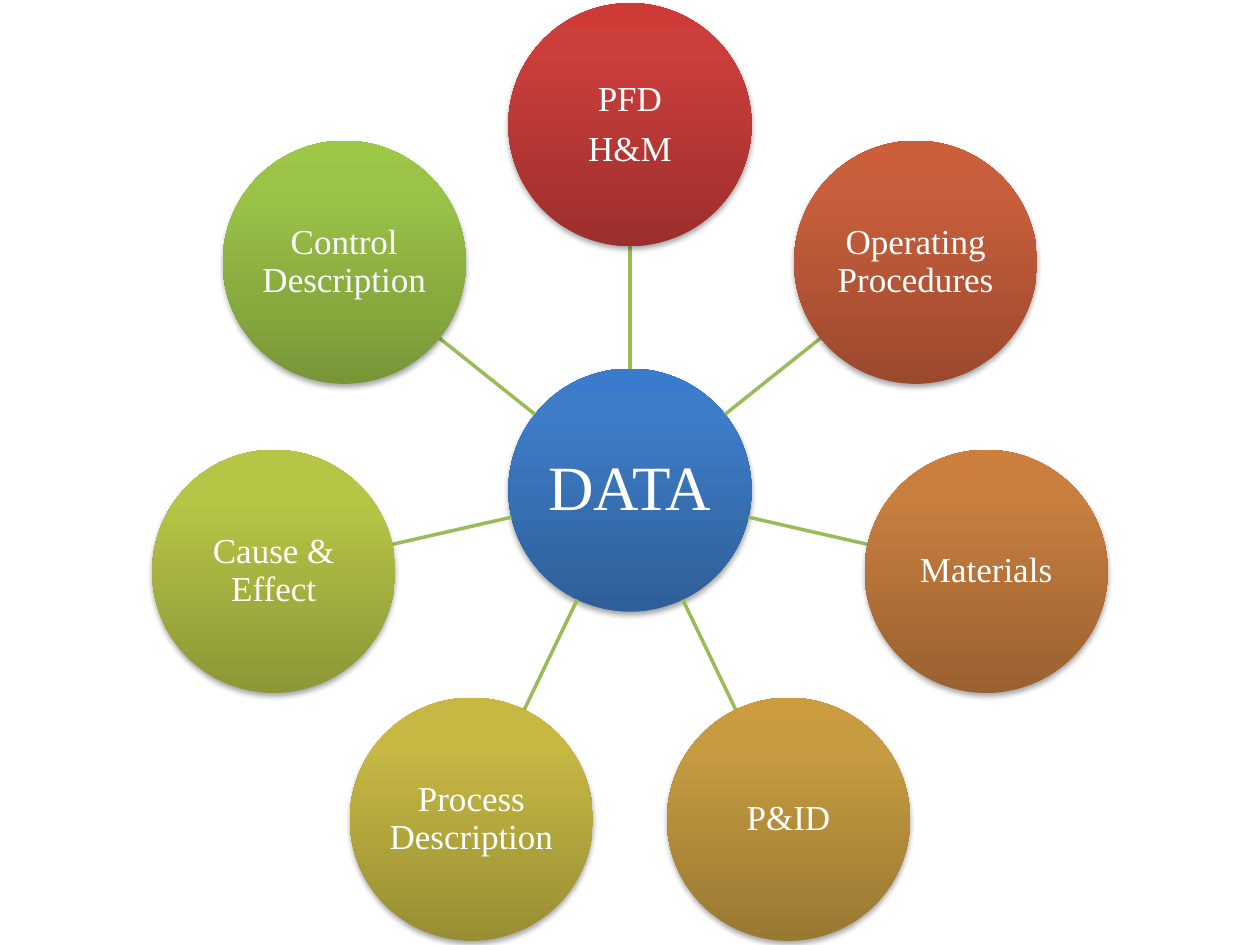
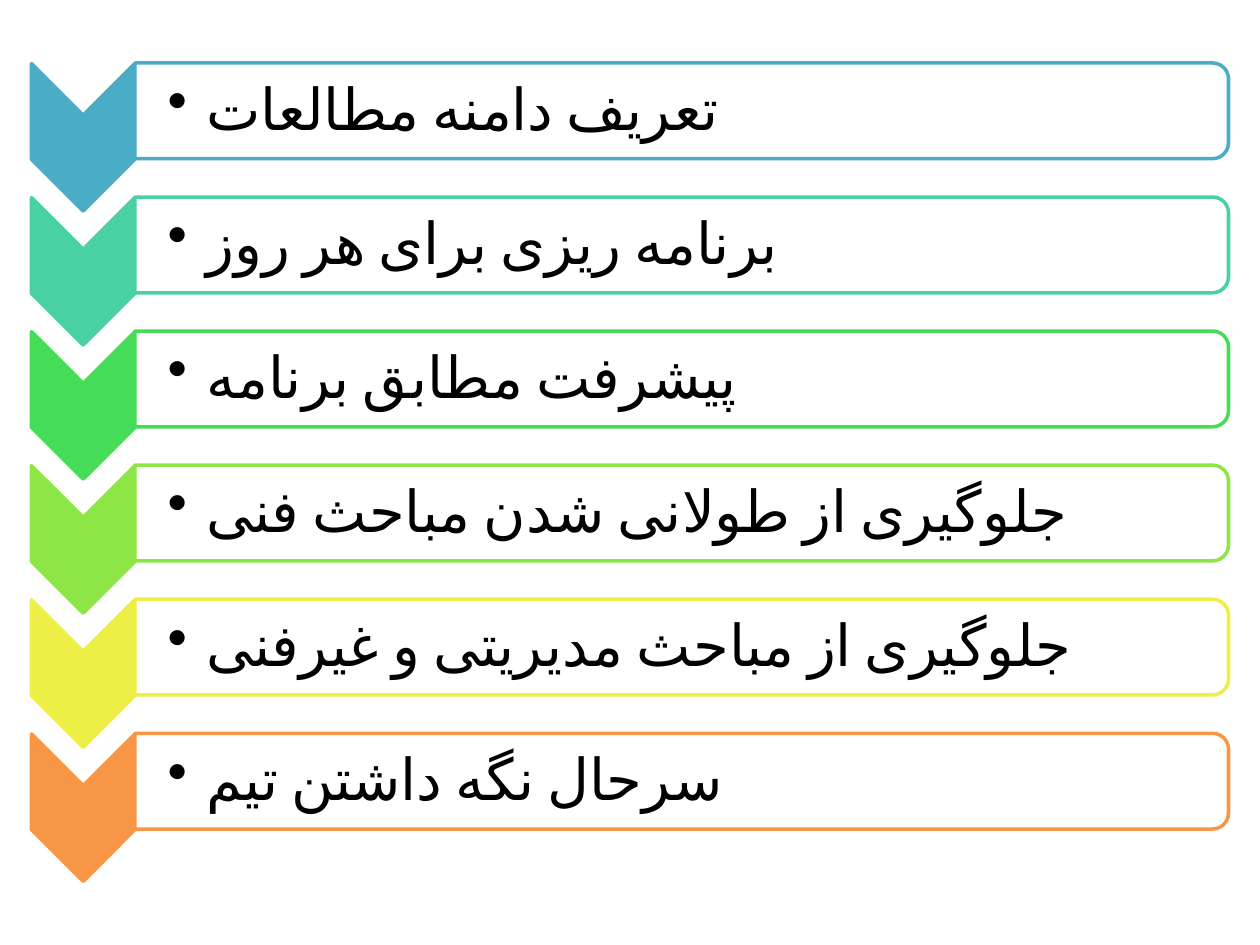
import copy
import math
from dataclasses import dataclass

from lxml import etree
from pptx import Presentation
from pptx import util as u
from pptx.dml.color import RGBColor
from pptx.enum import shapes, text
from pptx.oxml.ns import qn

PX = u.Inches(1) // 100  # 100 px to the inch
WHITE, BLACK, SPOKE_GREEN = "FFFFFF", "000000", "9BBB59"
LINE_WIDTH = u.Pt(2)

CIRCLE_SIZE = 193
HUB_X, HUB_Y = 500, 389
ORBIT_RADIUS = 290

FIRST_ROW_Y, LAST_ROW_Y = 88, 620
CHEVRON_X, CHEVRON_DROP = 66, 21
BAR_X = 541
BULLET_INDENT = 31


@dataclass(frozen=True)
class Circle:
    lines: tuple[str, ...]
    dark: str
    middle: str
    light: str
    font_size: int = 20
    inset: int = 1


@dataclass(frozen=True)
class Row:
    label: str
    color: str


HUB = Circle(("DATA",), "2F5F99", "3D7CC7", "3A7CCB", 36, 3)

SATELLITES = (
    Circle(("PFD", "H&M"), "9C2F2D", "CB3E3A", "CE3B37"),
    Circle(("Operating Procedures",), "9B492E", "C95F3C", "CD5E3A"),
    Circle(("Materials",), "9A6130", "C87E3F", "CC7E3C"),
    Circle(("P&ID",), "997832", "C79C41", "CB9D3F"),
    Circle(("Process Description",), "988E34", "C6B843", "C9BB41"),
    Circle(("Cause & Effect",), "8D9736", "B7C546", "B9C844"),
    Circle(("Control Description",), "779737", "9BC348", "9DC746"),
)

ROWS = (
    Row("تعریف دامنه مطالعات", "4BACC6"),
    Row("برنامه ریزی برای هر روز", "49D1A3"),
    Row("پیشرفت مطابق برنامه", "47DC57"),
    Row("جلوگیری از طولانی شدن مباحث فنی", "8DE646"),
    Row("جلوگیری از مباحث مدیریتی و غیرفنی", "EEEF46"),
    Row("سرحال نگه داشتن تیم", "F79646"),
)


def px(length: float) -> u.Emu:
    return u.Emu(round(length * PX))


def rgb(color: str) -> RGBColor:
    return RGBColor.from_string(color)


def add_centred(slide, kind, x: float, y: float, width: int, height: int):
    """Add a shadowless preset shape centred on x, y."""
    shape = slide.shapes.add_shape(
        kind, px(x - width / 2), px(y - height / 2), px(width), px(height))
    shape.shadow.inherit = False
    return shape


def set_frame(frame, left: int, other: int) -> None:
    """Anchor the text in the middle; left and other are its insets."""
    frame.word_wrap = True
    frame.vertical_anchor = text.MSO_ANCHOR.MIDDLE
    frame.margin_left = px(left)
    frame.margin_top = frame.margin_right = frame.margin_bottom = px(other)


def set_font(paragraph, name: str, size: int, color: str) -> None:
    paragraph.font.name = name
    paragraph.font.size = u.Pt(size)
    paragraph.font.color.rgb = rgb(color)


def set_persian(paragraph, font_name: str) -> None:
    """Mark the runs as Persian and name their complex-script font."""
    for run in paragraph.runs:
        properties = run._r.get_or_add_rPr()
        properties.set("lang", "fa-IR")
        etree.SubElement(properties, qn("a:cs"), typeface=font_name)


def fill_gradient(shape, circle: Circle) -> None:
    shape.fill.gradient()
    shape.fill.gradient_angle = 90
    stop_list = shape.element.spPr.find(".//" + qn("a:gsLst"))
    stop_list.insert(1, copy.deepcopy(stop_list[0]))
    stops = ((0, circle.dark), (0.8, circle.middle), (1, circle.light))
    for stop, (position, color) in zip(shape.fill.gradient_stops, stops):
        stop.position = position
        stop.color.rgb = rgb(color)


def add_soft_shadow(shape) -> None:
    effects = shape.element.spPr.find(qn("a:effectLst"))
    shadow = etree.SubElement(
        effects, qn("a:outerShdw"), blurRad="40000", dist="23000",
        dir="5400000", rotWithShape="0")
    color = etree.SubElement(shadow, qn("a:srgbClr"), val=BLACK)
    etree.SubElement(color, qn("a:alpha"), val="35000")


def add_circle(slide, circle: Circle, x: float, y: float) -> None:
    shape = add_centred(slide, shapes.MSO_SHAPE.OVAL, x, y, CIRCLE_SIZE, CIRCLE_SIZE)
    fill_gradient(shape, circle)
    shape.line.fill.background()
    add_soft_shadow(shape)
    frame = shape.text_frame
    set_frame(frame, circle.inset, circle.inset)
    for index, line in enumerate(circle.lines):
        paragraph = frame.add_paragraph() if index else frame.paragraphs[0]
        paragraph.text = line
        paragraph.alignment = text.PP_ALIGN.CENTER
        paragraph.line_spacing = 0.9
        paragraph.space_after = u.Pt(round(circle.font_size * 0.35))
        set_font(paragraph, "Times New Roman", circle.font_size, WHITE)


def orbit_point(angle: float, radius: float) -> tuple[float, float]:
    """Point around the hub; the angle runs clockwise from the top."""
    return HUB_X + radius * math.sin(angle), HUB_Y - radius * math.cos(angle)


def add_spoke(slide, angle: float) -> None:
    start = orbit_point(angle, CIRCLE_SIZE / 2)
    end = orbit_point(angle, ORBIT_RADIUS - CIRCLE_SIZE / 2)
    spoke = slide.shapes.add_connector(
        shapes.MSO_CONNECTOR.STRAIGHT, *map(px, start + end))
    spoke.line.color.rgb = rgb(SPOKE_GREEN)
    spoke.line.width = LINE_WIDTH
    etree.SubElement(spoke.element.spPr, qn("a:effectLst"))


def add_row_shape(slide, kind, x: int, y: float, width: int, height: int,
                  fill: str, line: str):
    """Add an outlined shape turned a quarter clockwise."""
    shape = add_centred(slide, kind, x, y, width, height)
    shape.rotation = 90
    shape.fill.solid()
    shape.fill.fore_color.rgb = rgb(fill)
    shape.line.color.rgb = rgb(line)
    shape.line.width = LINE_WIDTH
    return shape


def add_row(slide, row: Row, y: float) -> None:
    add_row_shape(slide, shapes.MSO_SHAPE.CHEVRON, CHEVRON_X, y + CHEVRON_DROP,
                  117, 82, row.color, row.color)
    bar = add_row_shape(slide, shapes.MSO_SHAPE.ROUND_2_SAME_RECTANGLE, BAR_X, y,
                        76, 868, WHITE, row.color)
    bar_color = bar.element.spPr.find(qn("a:solidFill"))[0]
    etree.SubElement(bar_color, qn("a:alpha"), val="90000")

    box = slide.shapes.add_textbox(px(107), px(y - 34), px(864), px(69))
    set_frame(box.text_frame, 26, 2)
    paragraph = box.text_frame.paragraphs[0]
    paragraph.text = row.label
    paragraph.level = 1
    paragraph.line_spacing = 0.9
    paragraph.space_after = u.Pt(5)
    properties = paragraph._p.get_or_add_pPr()
    properties.set("marL", str(px(BULLET_INDENT)))
    properties.set("indent", str(-px(BULLET_INDENT)))
    etree.SubElement(properties, qn("a:buChar"), char="•")
    set_font(paragraph, "Calibri", 33, BLACK)
    set_persian(paragraph, "Calibri")


def build_data_wheel(slide) -> None:
    add_circle(slide, HUB, HUB_X, HUB_Y)
    for index, circle in enumerate(SATELLITES):
        angle = math.tau * index / len(SATELLITES)
        add_spoke(slide, angle)
        add_circle(slide, circle, *orbit_point(angle, ORBIT_RADIUS))


def build_chevron_list(slide) -> None:
    pitch = (LAST_ROW_Y - FIRST_ROW_Y) / (len(ROWS) - 1)
    for index, row in enumerate(ROWS):
        add_row(slide, row, FIRST_ROW_Y + index * pitch)


def main() -> None:
    presentation = Presentation()
    presentation.slide_width, presentation.slide_height = px(1000), px(750)
    blank_layout = presentation.slide_layouts[6]
    for build in (build_data_wheel, build_chevron_list):
        build(presentation.slides.add_slide(blank_layout))
    presentation.save("out.pptx")


if __name__ == "__main__":
    main()
